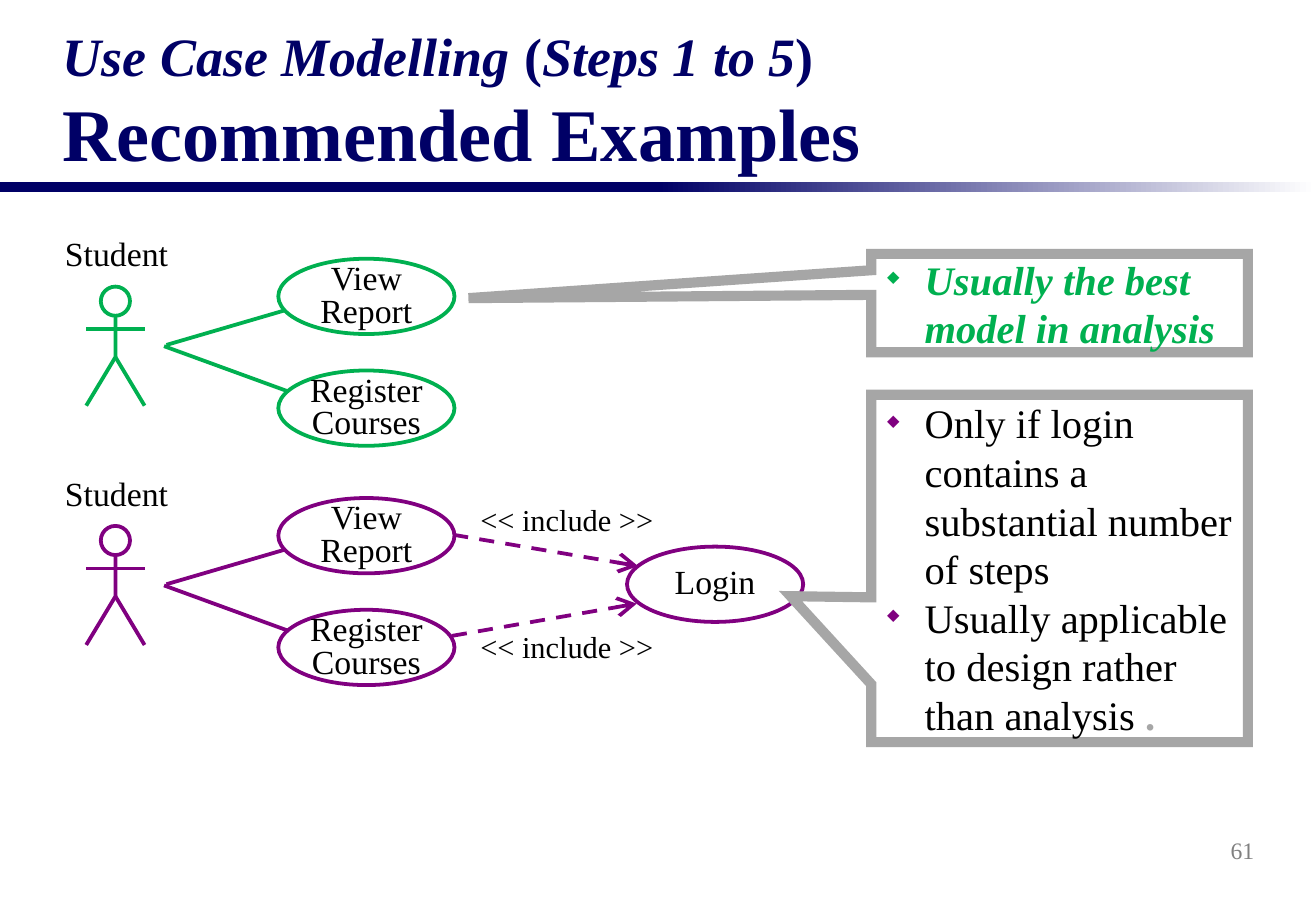
from dataclasses import dataclass
from lxml.etree import SubElement
from pptx import Presentation
from pptx.dml.color import RGBColor
from pptx.enum.dml import MSO_LINE
from pptx.enum.shapes import MSO_CONNECTOR, MSO_SHAPE
from pptx.enum.text import MSO_ANCHOR, PP_ALIGN
from pptx.oxml.ns import qn
from pptx.util import Inches, Pt

COLOURS = {
    "navy": "000066", "green": "00B050", "purple": "800080",
    "grey": "A6A6A6", "number": "808080", "black": "000000", "white": "FFFFFF",
}
FONT = "Times New Roman"
CASE_WIDTH, CASE_HEIGHT = 1.45, 0.62
Point = tuple[float, float]


@dataclass
class Span:
    text: str
    size: float = 20
    colour: str = "black"
    bold: bool = False
    italic: bool = False


@dataclass
class UseCase:
    left: float
    top: float
    lines: tuple[str, ...]
    label_width: float = 1.25


@dataclass
class Dependency:
    start: Point
    end: Point
    label_top: float


@dataclass
class Diagram:
    shift: float
    colour: str
    dependencies: tuple[Dependency, ...] = ()
    extra_cases: tuple[UseCase, ...] = ()


@dataclass
class Callout:
    top: float
    height: float
    pointer: Point
    bullet_colour: str
    paragraphs: list[list[Span]]


CASES = (UseCase(2.29, 2.13, ("View", "Report")),
         UseCase(2.29, 3.05, ("Register", "Courses")))
DIAGRAMS = (
    Diagram(0, "green"),
    Diagram(1.97, "purple",
            (Dependency((3.29, 5.31), (5.24, 4.97), 5.12),
             Dependency((3.3, 4.33), (5.25, 4.66), 4.08)),
            (UseCase(5.16, 4.5, ("Login",), 1),)),
)
CALLOUTS = (
    Callout(2.09, 0.81, (-1.569, -0.05), "green",
            [[Span("Usually the best model in analysis", 24, "green", True, True)]]),
    Callout(3.25, 2.86, (-0.714, 0.08), "purple",
            [[Span("Only if login contains a substantial number of steps", 24)],
             [Span("Usually applicable to design rather than analysis", 24),
              Span(" .", 24, "grey", True)]]),
)


def rgb(name: str) -> RGBColor:
    return RGBColor.from_string(COLOURS[name])


def add_span(para, span: Span) -> None:
    run = para.add_run()
    run.text = span.text
    font = run.font
    font.name, font.size = FONT, Pt(span.size)
    font.bold, font.italic = span.bold, span.italic
    font.color.rgb = rgb(span.colour)


def clear_margins(frame) -> None:
    frame.margin_left = frame.margin_right = frame.margin_top = frame.margin_bottom = 0


def add_text(page, left: float, top: float, width: float, height: float,
             paragraphs: list[list[Span]], align=PP_ALIGN.CENTER,
             anchor=MSO_ANCHOR.TOP, spacing: float | None = None):
    box = page.shapes.add_textbox(Inches(left), Inches(top), Inches(width), Inches(height))
    frame = box.text_frame
    frame.word_wrap = True
    frame.vertical_anchor = anchor
    for index, spans in enumerate(paragraphs):
        para = frame.add_paragraph() if index else frame.paragraphs[0]
        para.alignment = align
        if spacing:
            para.line_spacing = spacing
        for span in spans:
            add_span(para, span)
    return frame


def add_outline(page, kind, left: float, top: float, width: float, height: float,
                colour: str, weight: float = 2.25):
    shape = page.shapes.add_shape(kind, Inches(left), Inches(top), Inches(width), Inches(height))
    shape.shadow.inherit = False
    shape.fill.background()
    shape.line.color.rgb = rgb(colour)
    shape.line.width = Pt(weight)
    return shape


def add_line(page, start: Point, end: Point, colour: str, arrow: bool = False) -> None:
    line = page.shapes.add_connector(
        MSO_CONNECTOR.STRAIGHT, *(Inches(value) for value in (*start, *end)))
    line.line.color.rgb = rgb(colour)
    line.line.width = Pt(2.25)
    properties = line.element.spPr
    if arrow:
        line.line.dash_style = MSO_LINE.DASH
        SubElement(properties.find(qn("a:ln")), qn("a:tailEnd"),
                   type="arrow", w="lg", len="lg")
    SubElement(properties, qn("a:effectLst"))


def add_actor(page, shift: float, colour: str) -> None:
    add_outline(page, MSO_SHAPE.OVAL, 0.83, 2.36 + shift, 0.24, 0.24, colour)
    neck, hip, foot = ((Inches(x), Inches(y + shift))
                       for x, y in ((0.95, 2.59), (0.95, 2.94), (0.71, 3.34)))
    builder = page.shapes.build_freeform(*neck)
    builder.add_line_segments([hip, foot], close=False)
    body = builder.convert_to_shape()
    body.shadow.inherit = False
    body.fill.background()
    body.line.color.rgb = rgb(colour)
    body.line.width = Pt(2.25)
    add_line(page, (0.95, 2.94 + shift), (1.19, 3.34 + shift), colour)
    add_line(page, (0.71, 2.71 + shift), (1.19, 2.71 + shift), colour)
    frame = add_text(page, 0.53, 1.92 + shift, 0.86, 0.34, [[Span("Student")]])
    clear_margins(frame)
    frame.word_wrap = False


def add_use_case(page, case: UseCase, shift: float, colour: str) -> None:
    top = case.top + shift
    oval = add_outline(page, MSO_SHAPE.OVAL, case.left, top, CASE_WIDTH, CASE_HEIGHT, colour)
    oval.fill.solid()
    oval.fill.fore_color.rgb = rgb("white")
    single = len(case.lines) == 1
    add_text(page, case.left + (CASE_WIDTH - case.label_width) / 2,
             top + (0.07 if single else 0), case.label_width, 0.34 if single else 0.61,
             [[Span(line)] for line in case.lines], spacing=None if single else 0.8)


def add_diagram(page, diagram: Diagram) -> None:
    shift, colour = diagram.shift, diagram.colour
    add_line(page, (1.35, 2.85 + shift), (2.94, 3.43 + shift), colour)
    add_line(page, (1.37, 2.84 + shift), (3.08, 2.34 + shift), colour)
    add_actor(page, shift, colour)
    for dependency in diagram.dependencies:
        add_line(page, dependency.start, dependency.end, colour, arrow=True)
        add_text(page, 3.85, dependency.label_top, 1.63, 0.4, [[Span("<< include >>", 18)]])
    for case in diagram.extra_cases:
        add_use_case(page, case, 0, colour)
    for case in CASES:
        add_use_case(page, case, shift, colour)


def add_callout(page, callout: Callout) -> None:
    shape = add_outline(page, MSO_SHAPE.RECTANGULAR_CALLOUT, 7.17, callout.top, 3.1,
                        callout.height, "grey", 6)
    shape.adjustments[0], shape.adjustments[1] = callout.pointer
    SubElement(shape.element.spPr.find(qn("a:ln")), qn("a:miter"), lim="800000")
    frame = shape.text_frame
    frame.word_wrap = True
    frame.vertical_anchor = MSO_ANCHOR.MIDDLE
    clear_margins(frame)
    for index, spans in enumerate(callout.paragraphs):
        para = frame.add_paragraph() if index else frame.paragraphs[0]
        para.alignment = PP_ALIGN.LEFT
        for span in spans:
            add_span(para, span)
        properties = para._p.get_or_add_pPr()
        properties.set("marL", str(Inches(0.44)))
        properties.set("indent", str(Inches(-0.31)))
        bullet_colour = SubElement(properties, qn("a:buClr"))
        SubElement(bullet_colour, qn("a:srgbClr"), val=COLOURS[callout.bullet_colour])
        SubElement(properties, qn("a:buSzPct"), val="40000")
        SubElement(properties, qn("a:buChar"), char="◆")


def add_header(page) -> None:
    for left in (0, 5.41):
        band = add_outline(page, MSO_SHAPE.RECTANGLE, left, 1.5, 5.42, 0.08, "navy")
        band.line.fill.background()
        if left:
            band.fill.gradient()
            band.fill.gradient_angle = 0
            for stop, name in zip(band.fill.gradient_stops, ("navy", "white")):
                stop.color.rgb = rgb(name)
        else:
            band.fill.solid()
            band.fill.fore_color.rgb = rgb("navy")
    frame = add_text(page, 0.42, 0.29, 10, 1.21, [[
        Span("Use Case Modelling ", 32, "navy", True, True), Span("(", 32, "navy", True),
        Span("Steps 1 to 5", 32, "navy", True, True), Span(")", 32, "navy", True),
    ]], PP_ALIGN.LEFT, MSO_ANCHOR.BOTTOM)
    title = frame.paragraphs[0]
    title.add_line_break()
    add_span(title, Span("Recommended Examples", 44, "navy", True))


def main() -> None:
    deck = Presentation()
    deck.slide_width, deck.slide_height = Inches(10.83), Inches(7.5)
    page = deck.slides.add_slide(deck.slide_layouts[6])
    # Header and page number
    add_header(page)
    add_text(page, 8.16, 6.75, 2.26, 0.5, [[Span("61", 14, "number")]],
             PP_ALIGN.RIGHT, MSO_ANCHOR.MIDDLE)
    # Use case diagrams
    for diagram in DIAGRAMS:
        add_diagram(page, diagram)
    # Comments
    for callout in CALLOUTS:
        add_callout(page, callout)
    deck.save("out.pptx")


if __name__ == "__main__":
    main()
